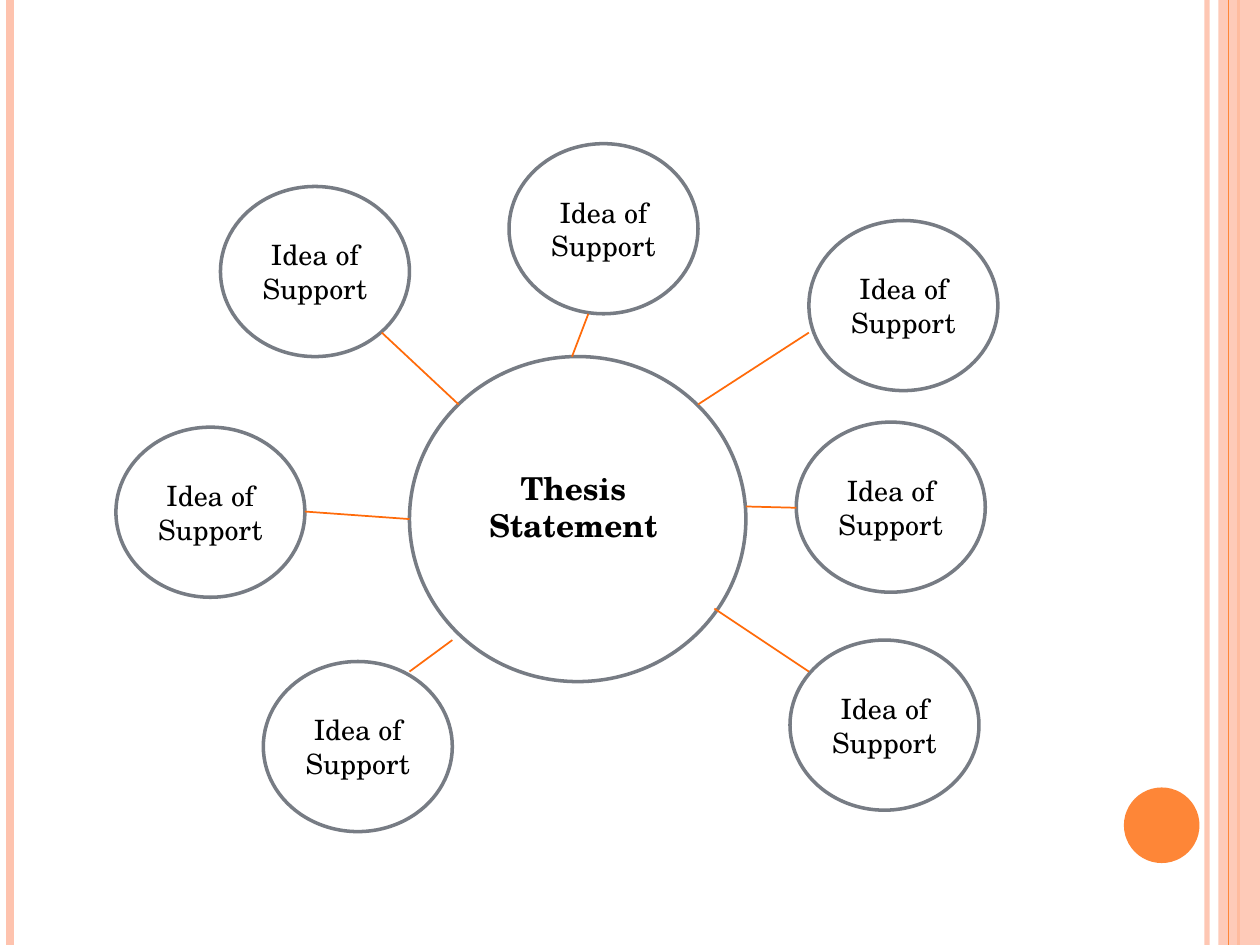
from lxml import etree
from pptx import Presentation
from pptx.dml.color import RGBColor
from pptx.enum.shapes import MSO_CONNECTOR, MSO_SHAPE
from pptx.enum.text import MSO_ANCHOR, PP_ALIGN
from pptx.oxml.ns import qn
from pptx.util import Inches, Pt

OVAL, RECT = MSO_SHAPE.OVAL, MSO_SHAPE.RECTANGLE
STRAIGHT = MSO_CONNECTOR.STRAIGHT
CENTER, MIDDLE = PP_ALIGN.CENTER, MSO_ANCHOR.MIDDLE

# The slide is a grid of 10 columns by 7.5 rows, one inch each.
COLS, ROWS = 10, 7.5
FONT = "TeX Gyre Schola"
WHITE, BLACK, GRAY = "FFFFFF", "000000", "777C84"
PEACH, ORANGE, SPOKE = "FEC3AE", "FE8637", "FF6B0A"

# Places within the map's box, in columns and rows
HUB = (2.33, 1.69, 2.67, 2.58)
TITLE = (2.67, 2.53, 1.92, 0.71)
IDEA = (1.5, 1.35)
IDEAS = [(5.5, 0.61), (0.83, 0.34), (0, 2.25), (1.17, 4.11),
         (5.4, 2.21), (5.35, 3.94), (3.12, 0)]
SPOKES = [
    ((2.11, 1.5), (2.72, 2.07)),
    ((5.5, 1.5), (4.62, 2.07)),
    ((5.4, 2.89), (5, 2.88)),
    ((3.75, 1.35), (3.62, 1.69)),
    ((1.5, 2.92), (2.33, 2.98)),
    ((2.33, 4.19), (2.67, 3.94)),
    ((4.75, 3.69), (5.5, 4.19)),
]


def color(code):
    return RGBColor.from_string(code)


def shift(box, place):
    """Turn a place within a box into slide lengths."""
    x, y, *size = place
    return [Inches(n) for n in (box[0] + x, box[1] + y, *size)]


def fade(part, share):
    """Set the opacity, in percent, of the part's solid color."""
    tone = next(part._element.spPr.iter(qn("a:srgbClr")))
    etree.SubElement(tone, qn("a:alpha")).set("val", str(share * 1000))


def add_line(slide, box, start, end, tone, width):
    line = slide.shapes.add_connector(
        STRAIGHT, *shift(box, start), *shift(box, end))
    line.line.color.rgb = color(tone)
    line.line.width = Pt(width)
    etree.SubElement(line._element.spPr, qn("a:effectLst"))
    return line


def add_shape(slide, box, kind, place, fill, edge=None):
    shape = slide.shapes.add_shape(kind, *shift(box, place))
    shape.shadow.inherit = False
    shape.fill.solid()
    shape.fill.fore_color.rgb = color(fill)
    if edge:
        shape.line.color.rgb = color(edge)
        shape.line.width = Pt(2)
    else:
        shape.line.fill.background()
    return shape


def write(shape, text, size, bold=False):
    frame = shape.text_frame
    frame.word_wrap = True
    para = frame.paragraphs[0]
    para.alignment = CENTER
    run = para.add_run()
    run.text = text
    run.font.name = FONT
    run.font.size = Pt(size)
    run.font.bold = bold
    run.font.color.rgb = color(BLACK)
    return frame


def add_frame(slide, box):
    """Draw the stripes at both edges and the dot."""
    wide, high = box[2:]

    def stripe(x, tone, width):
        return add_line(slide, box, (x, 0), (x, high), tone, width)

    fade(stripe(wide - 0.42, PEACH, 3), 93)
    stripe(0.08, PEACH, 4.5)
    stripe(wide - 0.17, ORANGE, 1.5)
    band = add_shape(slide, box, RECT, (wide - 0.33, 0, 0.33, high), PEACH)
    fade(band, 87)
    stripe(wide - 0.25, ORANGE, 0.75)
    add_shape(slide, box, OVAL, (wide - 1.08, high - 1.25, 0.6, 0.6), ORANGE)


def add_map(slide, box):
    """Draw the thesis hub, its ideas and the spokes between them."""
    add_shape(slide, box, OVAL, HUB, WHITE, GRAY)
    title = slide.shapes.add_textbox(*shift(box, TITLE))
    write(title, "Thesis Statement", 18, bold=True)
    for spot in IDEAS:
        idea = add_shape(slide, box, OVAL, spot + IDEA, WHITE, GRAY)
        write(idea, "Idea of Support", 16).vertical_anchor = MIDDLE
    for start, end in SPOKES:
        add_line(slide, box, start, end, SPOKE, 1)


def main():
    deck = Presentation()
    deck.slide_width, deck.slide_height = Inches(COLS), Inches(ROWS)
    slide = deck.slides.add_slide(deck.slide_layouts[6])
    add_frame(slide, (0, 0, COLS, ROWS))
    add_map(slide, (0.92, 1.14))
    deck.save("out.pptx")


if __name__ == "__main__":
    main()
